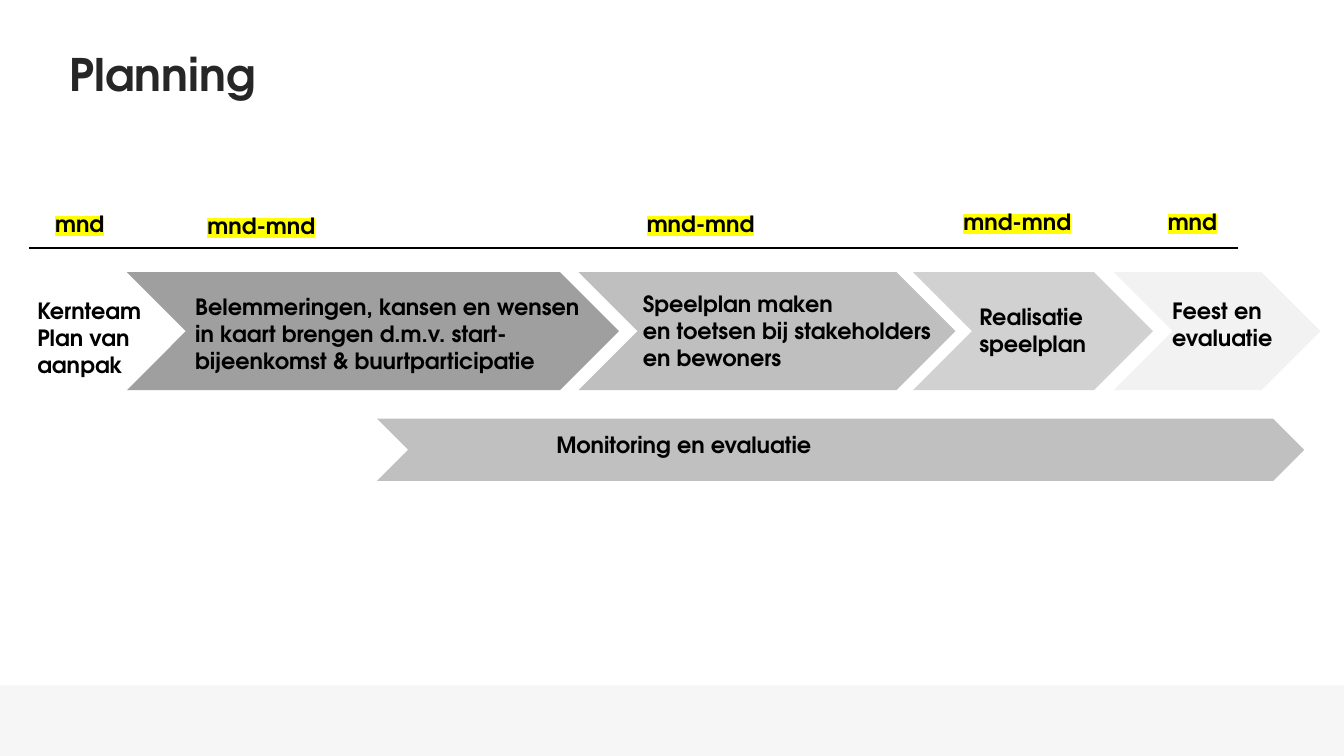
from lxml.etree import SubElement
from pptx import Presentation
from pptx.dml.color import RGBColor
from pptx.enum.shapes import MSO_CONNECTOR, MSO_SHAPE
from pptx.enum.text import MSO_ANCHOR
from pptx.oxml.ns import qn
from pptx.util import Cm, Pt

FONT = "TeX Gyre Adventor"
WIDE, HIGH = 33.87, 19.05

# chevron left and width; label left and top; text left, top and width; all from the band's corner
PHASES = [
    (None, None, "mnd", 0.4, 0.05, "Kernteam\vPlan van aanpak", -0.05, 2.25, 3.2),
    ((2.46, 12.4), "9F9F9F", "mnd-mnd", 4.24, 0.1,
     "Belemmeringen, kansen en wensen in kaart brengen d.m.v. start-bijeenkomst & buurtparticipatie",
     3.93, 2.15, 10.62),
    ((13.84, 9.5), "BFBFBF", "mnd-mnd", 15.31, 0.05,
     "Speelplan maken\nen toetsen bij stakeholders en bewoners", 15.21, 2.08, 8),
    ((22.27, 6.05), "D1D1D1", "mnd-mnd", 23.29, 0, "Realisatie speelplan", 23.69, 2.41, 4.47),
    ((27.33, 5.21), "F2F2F2", "mnd", 28.44, 0, "Feest en evaluatie", 28.55, 2.26, 4.24),
]


def color(text):
    return RGBColor.from_string(text)


def add_shape(slide, kind, box, fill):
    shape = slide.shapes.add_shape(kind, *map(Cm, box))
    shape.shadow.inherit = False
    shape.fill.solid()
    shape.fill.fore_color.rgb = color(fill)
    shape.line.fill.background()


def add_text(slide, box, text, size=16, ink="000000", mark=None):
    """Add bold text; mark is the highlight colour."""
    frame = slide.shapes.add_textbox(*map(Cm, box)).text_frame
    frame.word_wrap = True
    frame.text = text
    for para in frame.paragraphs:
        font = para.font
        font.name, font.size, font.bold = FONT, Pt(size), True
        font.color.rgb = color(ink)
        if mark:
            for run in para.runs:
                light = SubElement(run._r.get_or_add_rPr(), qn("a:highlight"))
                SubElement(light, qn("a:srgbClr"), val=mark)
    return frame


def add_title(slide, box):
    frame = add_text(slide, box, "Planning", 32, "262626")
    frame.vertical_anchor = MSO_ANCHOR.MIDDLE
    frame.margin_left = frame.margin_right = Cm(0.51)
    frame.margin_top = frame.margin_bottom = Cm(0.51)
    frame.paragraphs[0].line_spacing = 0.9


def add_axis(slide, left, top, width):
    line = slide.shapes.add_connector(
        MSO_CONNECTOR.STRAIGHT, Cm(left), Cm(top), Cm(left + width), Cm(top))
    line.line.color.rgb = color("000000")
    line.line.width = Pt(1.75)
    SubElement(line._element.spPr, qn("a:effectLst"))


def add_phases(slide, left, top, width):
    add_axis(slide, left, top + 1.14, width)
    for span, fill, *_ in PHASES:
        if span:
            add_shape(slide, MSO_SHAPE.CHEVRON, (left + span[0], top + 1.75, span[1], 2.97), fill)
    for _, _, month, x, y, text, tx, ty, tw in PHASES:
        add_text(slide, (left + x, top + y, 3.9, 0.94), month, mark="FFFF00")
        add_text(slide, (left + tx, top + ty, tw, 2.3), text)


def add_monitor(slide, left, top, width, height):
    add_shape(slide, MSO_SHAPE.CHEVRON, (left, top, width, height), "C0C0C0")
    add_text(slide, (left + 4.27, top + 0.2, 11.66, 0.94), "Monitoring en evaluatie")


def main():
    deck = Presentation()
    deck.slide_width, deck.slide_height = Cm(WIDE), Cm(HIGH)
    slide = deck.slides.add_slide(deck.slide_layouts[6])
    add_shape(slide, MSO_SHAPE.RECTANGLE, (0, 17.27, WIDE, HIGH - 17.27), "F6F6F6")
    add_title(slide, (1.24, 0.3, 31.5, 3.3))
    add_phases(slide, 0.74, 5.11, 30.45)
    add_monitor(slide, 9.5, 10.55, 23.37, 1.57)
    deck.save("out.pptx")


if __name__ == "__main__":
    main()
